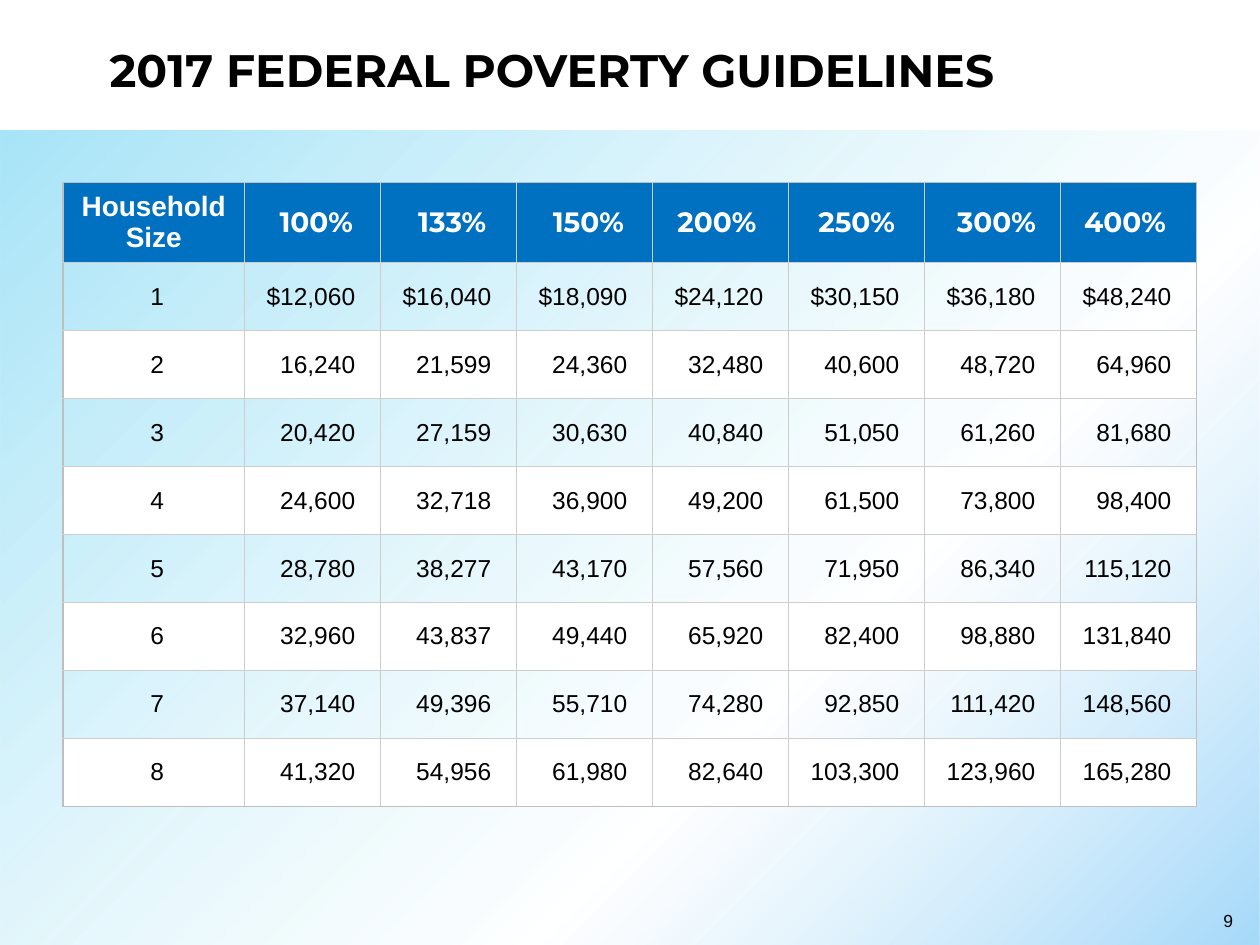
from lxml import etree
from pptx import Presentation
from pptx.dml.color import RGBColor
from pptx.enum.shapes import MSO_SHAPE
from pptx.enum.text import MSO_ANCHOR, MSO_AUTO_SIZE, PP_ALIGN
from pptx.oxml import parse_xml
from pptx.oxml.ns import nsdecls, qn
from pptx.util import Cm, Pt

RECTANGLE = MSO_SHAPE.RECTANGLE
MIDDLE = MSO_ANCHOR.MIDDLE
NO_AUTOFIT = MSO_AUTO_SIZE.NONE
LEFT, CENTER, RIGHT = PP_ALIGN.LEFT, PP_ALIGN.CENTER, PP_ALIGN.RIGHT
TITLE_ONLY = 5

HEADINGS = ["Household Size", "100%", "133%", "150%", "200%", "250%", "300%", "400%"]
# Sideways inset of each heading in cm: positive moves it right, negative left
HEADING_SHIFTS = [0, 0.15, 0.15, 0.15, -0.15, 0, 0.15, -0.15]
INCOMES = [
    ["$12,060", "$16,040", "$18,090", "$24,120", "$30,150", "$36,180", "$48,240"],
    ["16,240", "21,599", "24,360", "32,480", "40,600", "48,720", "64,960"],
    ["20,420", "27,159", "30,630", "40,840", "51,050", "61,260", "81,680"],
    ["24,600", "32,718", "36,900", "49,200", "61,500", "73,800", "98,400"],
    ["28,780", "38,277", "43,170", "57,560", "71,950", "86,340", "115,120"],
    ["32,960", "43,837", "49,440", "65,920", "82,400", "98,880", "131,840"],
    ["37,140", "49,396", "55,710", "74,280", "92,850", "111,420", "148,560"],
    ["41,320", "54,956", "61,980", "82,640", "103,300", "123,960", "165,280"],
]
INSET = 0.18
INCOME_INSET = 0.51
OUTER_EDGE = ("BFBFBF", 1)
INNER_EDGE = ("CDCDCD", 0.75)


def rgb(hex_color):
    return RGBColor.from_string(hex_color)


def write(frame, text, size, font="Arial", color="000000", bold=False, align=LEFT):
    paragraph = frame.paragraphs[0]
    paragraph.alignment = align
    run = paragraph.add_run()
    run.text = text
    run.font.size = Pt(size)
    run.font.name = font
    run.font.bold = bold
    run.font.color.rgb = rgb(color)
    return paragraph


def set_insets(box, left, top, right, bottom):
    box.margin_left, box.margin_top = Cm(left), Cm(top)
    box.margin_right, box.margin_bottom = Cm(right), Cm(bottom)


def add_backdrop(slide, left, top, width, height):
    backdrop = slide.shapes.add_shape(RECTANGLE, Cm(left), Cm(top), Cm(width), Cm(height))
    backdrop.shadow.inherit = False
    backdrop.line.fill.background()
    backdrop.fill.gradient()
    gradient = backdrop.element.spPr.find(qn("a:gradFill"))
    gradient.getparent().replace(gradient, parse_xml(
        f'<a:gradFill {nsdecls("a")} rotWithShape="1"><a:gsLst>'
        '<a:gs pos="0"><a:srgbClr val="A7E4F7"/></a:gs>'
        '<a:gs pos="65000"><a:srgbClr val="FFFFFF"><a:alpha val="74000"/></a:srgbClr></a:gs>'
        '<a:gs pos="100000"><a:srgbClr val="A5D9F9"/></a:gs></a:gsLst>'
        '<a:path path="circle"><a:fillToRect r="100000" b="100000"/></a:path></a:gradFill>'))
    # Send behind the title
    slide.shapes.element.insert(2, backdrop.element)


def place_title(slide, left, top, width, height):
    title = slide.shapes.title
    title.left, title.top = Cm(left), Cm(top)
    title.width, title.height = Cm(width), Cm(height)
    frame = title.text_frame
    frame.word_wrap = True
    frame.auto_size = NO_AUTOFIT
    frame.vertical_anchor = MIDDLE
    set_insets(frame, 0, 0.13, 0, 0.13)
    heading = write(frame, "2017 FEDERAL POVERTY GUIDELINES", 26, "Montserrat", bold=True)
    heading.line_spacing = 0.9


def add_page_number(slide, left, top, width, height):
    frame = slide.shapes.add_textbox(Cm(left), Cm(top), Cm(width), Cm(height)).text_frame
    frame.word_wrap = False
    frame.vertical_anchor = MIDDLE
    set_insets(frame, 0, 0, 0, 0)
    write(frame, "9", 10, align=RIGHT)


def set_borders(cell, outer_sides):
    properties = cell._tc.get_or_add_tcPr()
    for side in "LRTB":
        color, weight = OUTER_EDGE if side in outer_sides else INNER_EDGE
        edge = etree.SubElement(properties, qn(f"a:ln{side}"), w=str(Pt(weight)))
        fill = etree.SubElement(edge, qn("a:solidFill"))
        etree.SubElement(fill, qn("a:srgbClr"), val=color)


def format_cell(cell, outer_sides, fill, left=INSET, right=INSET):
    set_borders(cell, outer_sides)
    if fill:
        cell.fill.solid()
        cell.fill.fore_color.rgb = rgb(fill)
    else:
        cell.fill.background()
    cell.vertical_anchor = MIDDLE
    set_insets(cell, left, INSET, right, INSET)


def add_guidelines(slide, left, top, width, header_height, row_height, size_width):
    rows = [HEADINGS] + [[str(size), *incomes] for size, incomes in enumerate(INCOMES, 1)]
    last_row, last_column = len(rows) - 1, len(HEADINGS) - 1
    height = header_height + row_height * last_row
    table = slide.shapes.add_table(len(rows), len(HEADINGS), Cm(left), Cm(top),
                                   Cm(width), Cm(height)).table
    table.first_row = table.horz_banding = False
    for c, column in enumerate(table.columns):
        column.width = Cm((width - size_width) / last_column if c else size_width)
    for r, row in enumerate(table.rows):
        row.height = Cm(row_height if r else header_height)

    for r, texts in enumerate(rows):
        for c, text in enumerate(texts):
            cell = table.cell(r, c)
            outer_sides = [side for side, on_edge in (
                ("L", c == 0), ("R", c == last_column),
                ("T", r == 0), ("B", r == last_row)) if on_edge]
            band = None if r % 2 else "FFFFFF"
            if r == 0:
                shift = HEADING_SHIFTS[c]
                format_cell(cell, outer_sides, "0070C0",
                            INSET + max(shift, 0), INSET + max(-shift, 0))
                write(cell.text_frame, text, 16, "Montserrat" if c else "Arial",
                      "FFFFFF", True, CENTER)
            elif c == 0:
                format_cell(cell, outer_sides, band, left=INSET + 0.14)
                write(cell.text_frame, text, 14, align=CENTER)
            else:
                format_cell(cell, outer_sides, band, right=INCOME_INSET)
                write(cell.text_frame, text, 14, align=RIGHT)


def main():
    deck = Presentation()
    deck.slide_width, deck.slide_height = Cm(25.4), Cm(19.05)
    slide = deck.slides.add_slide(deck.slide_layouts[TITLE_ONLY])
    add_backdrop(slide, 0, 2.64, 25.4, 16.41)
    place_title(slide, 2.21, 0.84, 19.74, 1.24)
    add_guidelines(slide, 1.27, 3.68, 22.86, header_height=1.6, row_height=1.37, size_width=3.66)
    add_page_number(slide, 24.43, 18.34, 0.43, 0.43)
    deck.save("out.pptx")


if __name__ == "__main__":
    main()
